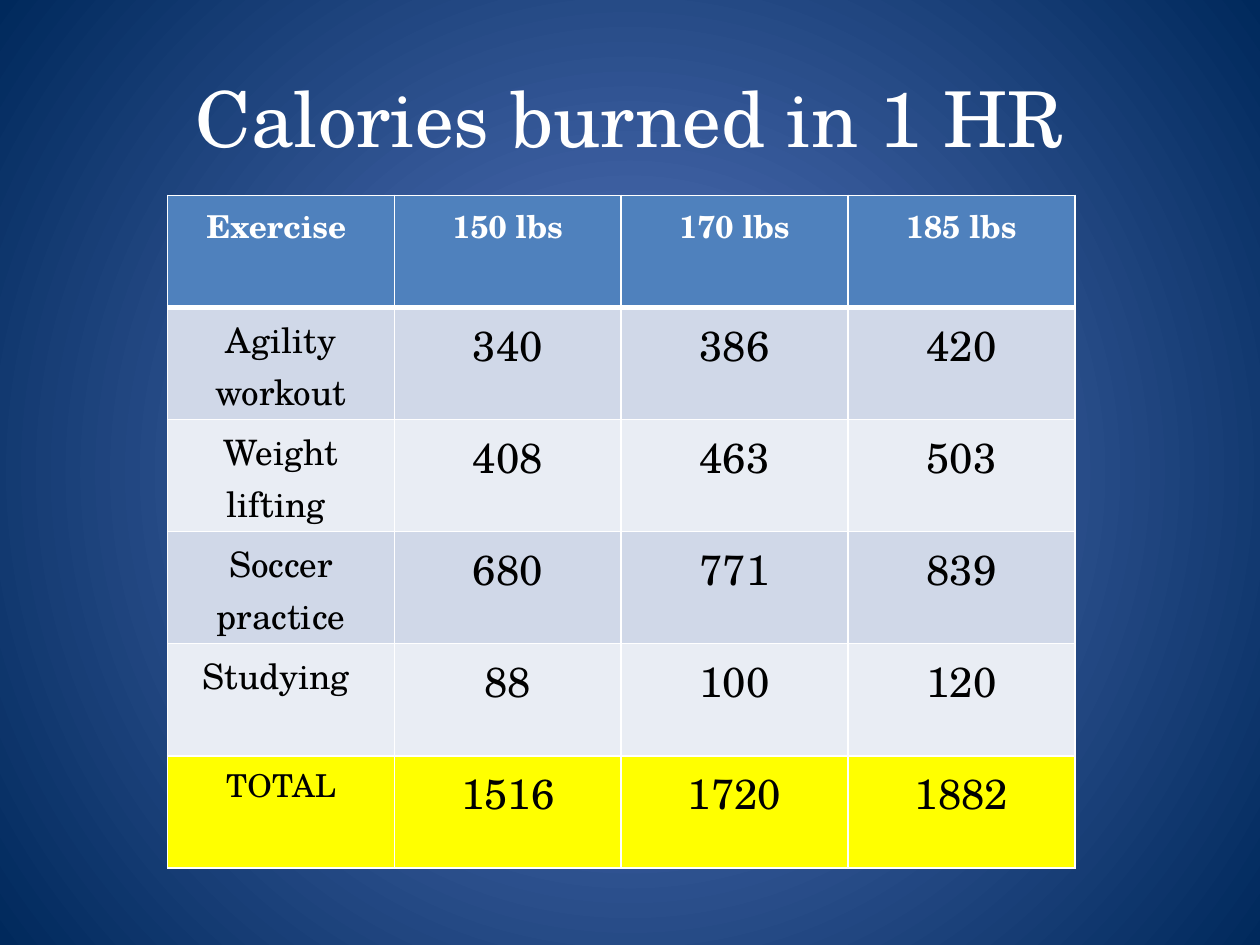
from lxml.etree import SubElement
from pptx import Presentation
from pptx.dml.color import RGBColor
from pptx.enum.text import MSO_ANCHOR, PP_ALIGN
from pptx.oxml.ns import qn
from pptx.util import Inches, Pt

# Content
TITLE = "Calories burned in 1 HR"
ROWS = [
    ("Exercise ", "150 lbs", "170 lbs", "185 lbs"),
    ("Agility workout", "340", "386", "420"),
    ("Weight lifting ", "408", "463", "503"),
    ("Soccer practice", "680", "771", "839"),
    ("Studying ", "88", "100", "120"),
    ("TOTAL", "1516", "1720", "1882"),
]

THEME = {
    "font": "TeX Gyre Schola",
    "glow": ("5E7CC5", "00295C"),
    "border": "FFFFFF",
    "fills": {"head": "4F81BD", "odd": "D0D8E8", "even": "E9EDF4", "total": "FFFF00"},
    "title": {"size": 44, "color": "FFFFFF", "bold": False},
    "head": {"size": 18, "color": "FFFFFF", "bold": True},
    "label": {"size": 20, "color": "000000", "bold": False},
    "total": {"size": 18, "color": "000000", "bold": False},
    "value": {"size": 24, "color": "000000", "bold": False},
}
TABLE_AT = (1.33, 1.55)
COL_W, ROW_H = 1.8, 0.89


def write(tf, text, style):
    """Put one centred, styled run into a text frame."""
    p = tf.paragraphs[0]
    p.alignment = PP_ALIGN.CENTER
    r = p.add_run()
    r.text = text
    fmt = THEME[style]
    values = {"name": THEME["font"], "size": Pt(fmt["size"]), "bold": fmt["bold"]}
    for key, value in values.items():
        setattr(r.font, key, value)
    r.font.color.rgb = RGBColor.from_string(fmt["color"])


def set_borders(cell, widths):
    """Draw solid cell edges; they must come before the fill."""
    tc_pr = cell._tc.get_or_add_tcPr()
    for i, (side, width) in enumerate(widths.items()):
        ln = SubElement(tc_pr, qn(f"a:ln{side}"), w=str(Pt(width)))
        fill = SubElement(ln, qn("a:solidFill"))
        SubElement(fill, qn("a:srgbClr"), val=THEME["border"])
        tc_pr.insert(i, ln)


def row_kind(i):
    if i == 0:
        return "head"
    if i == len(ROWS) - 1:
        return "total"
    return "odd" if i % 2 else "even"


prs = Presentation()
prs.slide_width, prs.slide_height = Inches(10), Inches(7.5)
s = prs.slides.add_slide(prs.slide_layouts[6])

# Radial background
bg = s.background.fill
bg.gradient()
for stop, color in zip(bg.gradient_stops, THEME["glow"]):
    stop.color.rgb = RGBColor.from_string(color)
grad = s._element.find(".//" + qn("a:gradFill"))
grad.remove(grad.find(qn("a:lin")))
circle = SubElement(grad, qn("a:path"), path="circle")
SubElement(circle, qn("a:fillToRect"), {side: "50000" for side in "ltrb"})

# Title
tf = s.shapes.add_textbox(Inches(0.5), Inches(0.3), Inches(9), Inches(1.25)).text_frame
tf.word_wrap = True
tf.vertical_anchor = MSO_ANCHOR.MIDDLE
write(tf, TITLE, "title")

# Calorie table
n_rows, n_cols = len(ROWS), len(ROWS[0])
table = s.shapes.add_table(
    n_rows, n_cols, *map(Inches, TABLE_AT), Inches(COL_W * n_cols), Inches(ROW_H * n_rows)
).table
for row in table.rows:
    row.height = Inches(ROW_H)
for i, texts in enumerate(ROWS):
    kind = row_kind(i)
    for j, text in enumerate(texts):
        cell = table.cell(i, j)
        cell.fill.solid()
        cell.fill.fore_color.rgb = RGBColor.from_string(THEME["fills"][kind])
        set_borders(cell, {"L": 1, "R": 1, "T": 3 if i == 1 else 1, "B": 3 if i == 0 else 1})
        if kind == "head":
            style = "head"
        elif j:
            style = "value"
        else:
            style = "total" if kind == "total" else "label"
        write(cell.text_frame, text, style)

prs.save("out.pptx")
